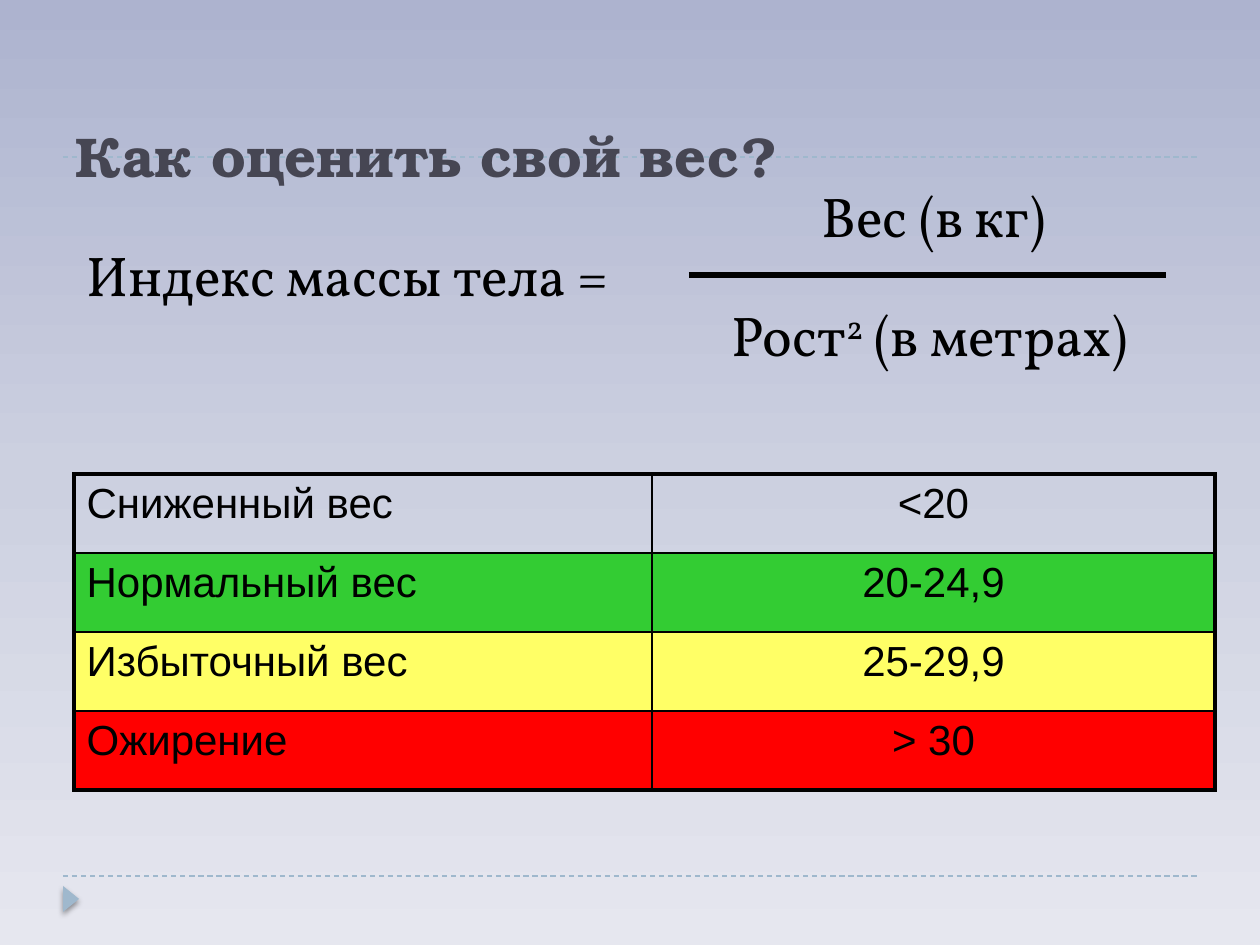
from lxml import etree
from pptx import Presentation
from pptx.dml.color import RGBColor
from pptx.enum.dml import MSO_LINE
from pptx.enum.shapes import MSO_CONNECTOR, MSO_SHAPE
from pptx.enum.text import MSO_ANCHOR, MSO_AUTO_SIZE, PP_ALIGN
from pptx.oxml import parse_xml
from pptx.oxml.ns import nsdecls, qn
from pptx.util import Pt

PX = 914400 // 126
STRAIGHT = MSO_CONNECTOR.STRAIGHT
DASH = MSO_LINE.DASH
LEFT, CENTER = PP_ALIGN.LEFT, PP_ALIGN.CENTER
BLACK, ACCENT = "000000", "9FB8CD"


def add_line(x1, x2, y, color, width):
    line = s.shapes.add_connector(STRAIGHT, x1 * PX, y * PX, x2 * PX, y * PX)
    line.line.color.rgb = RGBColor.from_string(color)
    line.line.width = Pt(width)
    etree.SubElement(line.element.spPr, qn("a:effectLst"))
    return line


def add_run(p, text, size, font, color=BLACK):
    r = p.add_run()
    r.text = text
    r.font.size = Pt(size)
    r.font.name = font
    r.font.color.rgb = RGBColor.from_string(color)
    return r


prs = Presentation()
prs.slide_width, prs.slide_height = 1260 * PX, 945 * PX
s = prs.slides.add_slide(prs.slide_layouts[5])

# Background gradient, top to bottom
fill = s.background.fill
fill.gradient()
fill.gradient_angle = 270
stops = s.element.find(".//" + qn("a:gsLst"))
for gs in list(stops):
    stops.remove(gs)
for pos, color in ((0, "ADB3CF"), (50, "CCD0E0"), (100, "E6E7EF")):
    stops.append(parse_xml(
        f'<a:gs {nsdecls("a")} pos="{pos * 1000}"><a:srgbClr val="{color}"/></a:gs>'))

# Dashed rules and corner marker
for y in (876, 157):
    add_line(63, 1197, y, ACCENT, 0.75).line.dash_style = DASH
marker = s.shapes.add_shape(MSO_SHAPE.ISOSCELES_TRIANGLE, 58 * PX, 891 * PX, 26 * PX, 16 * PX)
marker.rotation = 90
marker.fill.solid()
marker.fill.fore_color.rgb = RGBColor.from_string(ACCENT)
marker.line.fill.background()
marker.element.spPr.append(parse_xml(
    f'<a:effectLst {nsdecls("a")}><a:outerShdw blurRad="39370" dist="20320" dir="5400000" '
    f'rotWithShape="0"><a:srgbClr val="{BLACK}"><a:alpha val="38000"/></a:srgbClr>'
    '</a:outerShdw></a:effectLst>'))

# Title, in front of the rules
title = s.shapes.title
marker.element.addnext(title.element)
title.left, title.top, title.width, title.height = 63 * PX, 38 * PX, 1134 * PX, 157 * PX
tf = title.text_frame
tf.auto_size = MSO_AUTO_SIZE.NONE
tf.vertical_anchor = MSO_ANCHOR.BOTTOM
p = tf.paragraphs[0]
p.alignment = LEFT
add_run(p, "Как оценить свой вес?", 32, "TeX Gyre Bonum", "464653").font.bold = True

# Table of weight categories
rows = [
    ("Сниженный вес", "<20", None),
    ("Нормальный вес", "20-24,9", "33CC33"),
    ("Избыточный вес", "25-29,9", "FFFF66"),
    ("Ожирение", "> 30", "FF0000"),
]
frame = s.shapes.add_table(len(rows), 2, 74 * PX, 474 * PX, 1141 * PX, 316 * PX)
table = frame.table
table.first_row = table.horz_banding = False
for col, width in zip(table.columns, (578, 563)):
    col.width = width * PX
for i, (label, value, color) in enumerate(rows):
    table.rows[i].height = 79 * PX
    for j, text in enumerate((label, value)):
        cell = table.cell(i, j)
        p = cell.text_frame.paragraphs[0]
        p.alignment = CENTER if j else LEFT
        add_run(p, text, 24, "Arial")
        # Thick outer borders, thin inner ones; borders come before the fill
        tcPr = cell._tc.get_or_add_tcPr()
        outer = {"lnL": j == 0, "lnR": j == 1, "lnT": i == 0, "lnB": i == len(rows) - 1}
        for side, thick in outer.items():
            tcPr.append(parse_xml(
                f'<a:{side} {nsdecls("a")} w="{Pt(2.25 if thick else 1)}"><a:solidFill>'
                f'<a:srgbClr val="{BLACK}"/></a:solidFill></a:{side}>'))
        if color:
            cell.fill.solid()
            cell.fill.fore_color.rgb = RGBColor.from_string(color)
        else:
            cell.fill.background()

# Body mass index formula
add_line(689, 1166, 275, BLACK, 3)
formula = [
    (809, 175, 278, [("Вес (в кг)", False)]),
    (719, 294, 456, [("Рост", False), ("2", True), (" (в метрах)", False)]),
    (74, 234, 635, [("Индекс массы тела =", False)]),
]
for x, y, width, parts in formula:
    tf = s.shapes.add_textbox(x * PX, y * PX, width * PX, 79 * PX).text_frame
    tf.word_wrap = True
    tf.auto_size = MSO_AUTO_SIZE.SHAPE_TO_FIT_TEXT
    for text, raised in parts:
        r = add_run(tf.paragraphs[0], text, 32, "Vollkorn")
        if raised:
            r.font._element.set("baseline", "30000")

prs.save("out.pptx")
